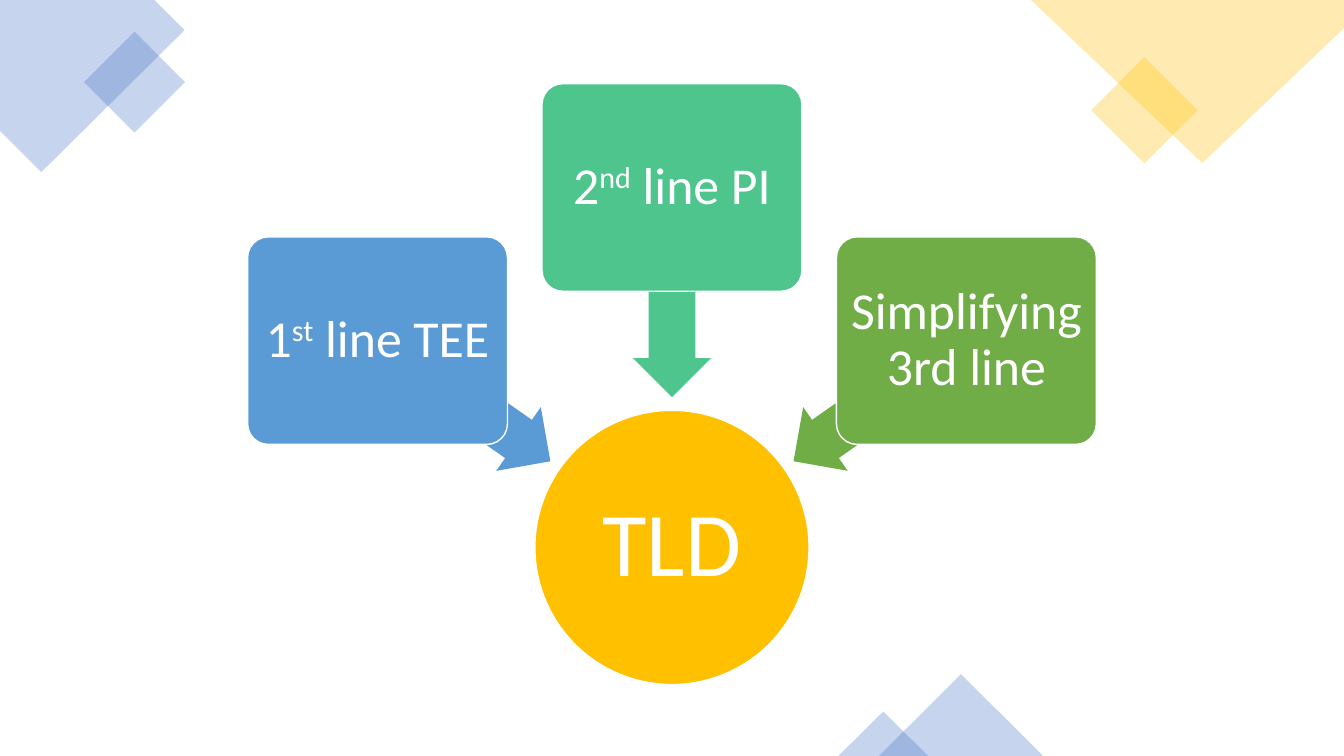
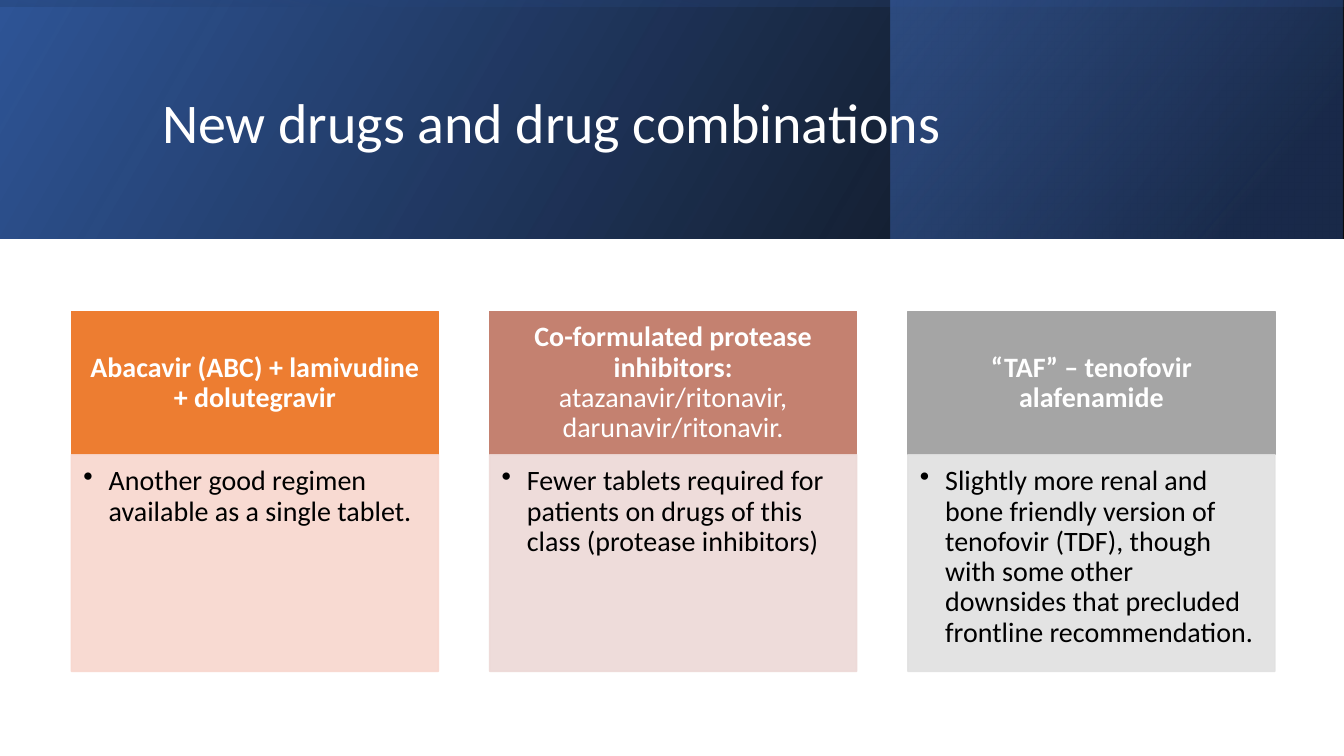
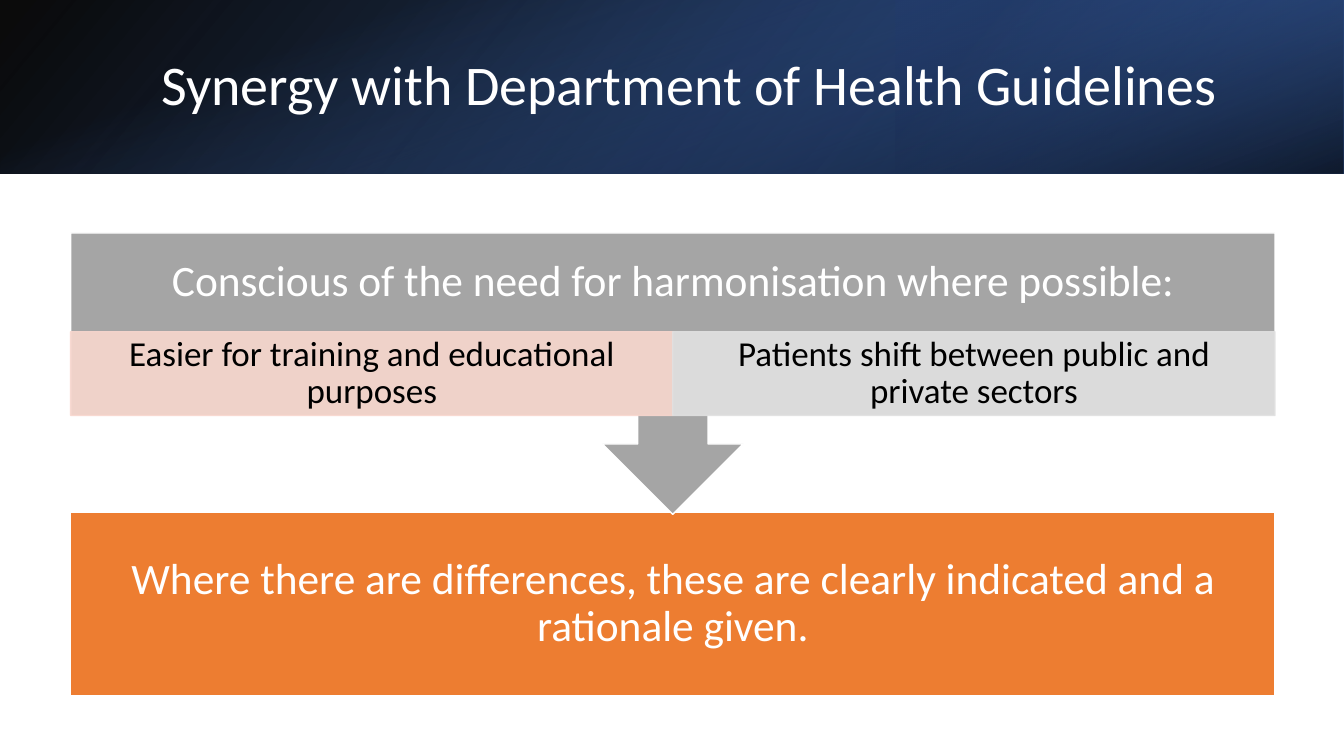
from dataclasses import dataclass

from lxml import etree
from pptx import Presentation
from pptx.dml.color import RGBColor
from pptx.enum.shapes import MSO_SHAPE as Preset
from pptx.enum.text import MSO_ANCHOR as Anchor, PP_ALIGN as Align
from pptx.oxml.ns import qn
from pptx.util import Cm, Pt

COLORS = {
    "white": "FFFFFF",
    "black": "000000",
    "blue": "4472C4",
    "deep_blue": "2F5597",
    "navy": "203864",
    "gold": "FFC000",
    "sky": "5B9BD5",
    "mint": "4DC58D",
    "green": "70AD47",
    "orange": "ED7D31",
    "clay": "C48170",
    "gray": "A5A5A5",
    "pale_orange": "F8D7CE",
    "pale_clay": "EDD9D7",
    "pale_gray": "E1E1E1",
}
FONT = "Calibri"
PAGE_WIDTH, PAGE_HEIGHT = 33.87, 19.05


@dataclass(frozen=True)
class Area:
    """A rectangle on the page, in centimetres."""
    left: float
    top: float
    width: float
    height: float

    def lengths(self):
        return Cm(self.left), Cm(self.top), Cm(self.width), Cm(self.height)


@dataclass(frozen=True)
class Span:
    text: str
    bold: bool = False
    raised: bool = False


@dataclass(frozen=True)
class TextStyle:
    size: float
    color: str = "white"
    align: Align = Align.CENTER
    anchor: Anchor = Anchor.MIDDLE
    insets: tuple = (0.25, 0.13, 0.25, 0.13)
    bullet: bool = False


@dataclass(frozen=True)
class Stop:
    position: float
    color: str
    opacity: int = 100


@dataclass(frozen=True)
class Gradient:
    stops: tuple
    angle: float


@dataclass(frozen=True)
class Spoke:
    side: int
    box_top: float
    arrow_middle: float
    color: str
    spans: tuple


@dataclass(frozen=True)
class Card:
    color: str
    pale: str
    heading: tuple
    body: str


TITLE = TextStyle(40, align=Align.LEFT)
HUB = TextStyle(65, insets=(0.13,) * 4)
SPOKE = TextStyle(37, insets=(0.2,) * 4)
CARD_HEAD = TextStyle(20, insets=(0.41, 0.23, 0.41, 0.23))
CARD_BODY = TextStyle(20, "black", Align.LEFT, Anchor.TOP, (0.3, 0.3, 0.41, 0.43), True)
STATEMENT = TextStyle(31, insets=(0.61,) * 4)
REASON = TextStyle(25, "black", insets=(0.48, 0.08, 0.48, 0.08))
BAND_BASE = (Stop(0, "black", 96), Stop(1, "deep_blue"))


def rgb(name: str) -> RGBColor:
    return RGBColor.from_string(COLORS[name])


def set_opacity(shape, opacities) -> None:
    """Give the colours of a shape, in order, their opacity in percent."""
    for color, opacity in zip(list(shape.element.spPr.iter(qn("a:srgbClr"))), opacities):
        etree.SubElement(color, qn("a:alpha")).set("val", str(opacity * 1000))


def paint(shape, fill: str, line: str | None = None, opacity: int = 100) -> None:
    shape.shadow.inherit = False
    shape.fill.solid()
    shape.fill.fore_color.rgb = rgb(fill)
    if line:
        shape.line.color.rgb = rgb(line)
        shape.line.width = Pt(1)
    else:
        shape.line.fill.background()
    if opacity < 100:
        set_opacity(shape, (opacity, opacity))


def write(shape, spans: tuple, style: TextStyle) -> None:
    frame = shape.text_frame
    frame.word_wrap = True
    frame.vertical_anchor = style.anchor
    (frame.margin_left, frame.margin_top,
     frame.margin_right, frame.margin_bottom) = map(Cm, style.insets)
    para = frame.paragraphs[0]
    if style.bullet:
        props = para._p.get_or_add_pPr()
        props.set("marL", str(Cm(0.64)))
        props.set("indent", str(-Cm(0.64)))
        etree.SubElement(props, qn("a:buChar")).set("char", "•")
    para.alignment = style.align
    para.line_spacing = 0.9
    para.font.name = FONT
    para.font.size = Pt(style.size)
    para.font.color.rgb = rgb(style.color)
    for span in spans:
        run = para.add_run()
        run.text = span.text
        if span.bold:
            run.font.bold = True
        if span.raised:
            run._r.get_or_add_rPr().set("baseline", "30000")


def add_block(page, preset, area: Area, fill: str, line: str | None = None,
              opacity: int = 100, rotation: float = 0, adjust: tuple = ()):
    shape = page.shapes.add_shape(preset, *area.lengths())
    paint(shape, fill, line, opacity)
    shape.rotation = rotation
    for index, value in enumerate(adjust):
        shape.adjustments[index] = value
    return shape


def add_text(page, area: Area, text: str, style: TextStyle) -> None:
    write(page.shapes.add_textbox(*area.lengths()), (Span(text),), style)


def add_polygon(page, points: tuple, fill: str, opacity: int) -> None:
    start, *rest = [(Cm(x), Cm(y)) for x, y in points]
    builder = page.shapes.build_freeform(*start)
    builder.add_line_segments(rest, close=True)
    paint(builder.convert_to_shape(), fill, opacity=opacity)


def add_gradient(page, area: Area, gradient: Gradient,
                 rotation: float = 0, mirrored: bool = True) -> None:
    shape = page.shapes.add_shape(Preset.RECTANGLE, *area.lengths())
    shape.shadow.inherit = False
    shape.line.fill.background()
    shape.rotation = rotation
    if mirrored:
        shape.element.spPr.find(qn("a:xfrm")).set("flipH", "1")
    shape.fill.gradient()
    shape.fill.gradient_angle = 360 - gradient.angle
    for target, stop in zip(shape.fill.gradient_stops, gradient.stops):
        target.position = stop.position
        target.color.rgb = rgb(stop.color)
    set_opacity(shape, [stop.opacity for stop in gradient.stops])


def upright(height: float) -> Area:
    """The area that covers a full-width band after a quarter turn."""
    return Area((PAGE_WIDTH - height) / 2, (height - PAGE_WIDTH) / 2, height, PAGE_WIDTH)


def add_corner_decoration(page) -> None:
    opacity = 30
    add_polygon(page, ((0, 0), (3.89, 0), (4.65, 0.76), (1.04, 4.34), (0, 3.3)),
                "blue", opacity)
    add_block(page, Preset.RECTANGLE, Area(2.49, 1.17, 1.8, 1.8), "blue",
              opacity=opacity, rotation=45)
    add_block(page, Preset.RECTANGLE, Area(27.89, 1.83, 1.9, 1.9), "gold",
              opacity=opacity, rotation=45)
    add_polygon(page, ((PAGE_WIDTH, 0), (25.98, 0), (30.3, 4.11), (PAGE_WIDTH, 0.71)),
                "gold", opacity)
    for left, width, height in ((22.15, 4.14, 2.06), (21.13, 2.26, 1.12)):
        add_block(page, Preset.ISOSCELES_TRIANGLE,
                  Area(left, PAGE_HEIGHT - height, width, height), "blue", opacity=opacity)


def add_spoke(page, spoke: Spoke) -> None:
    """An arrow to the hub, with its box over the arrow's tail."""
    center = PAGE_WIDTH / 2
    width, height = 5.31, 1.96
    arrow = Area(center + 5.24 * spoke.side - width / 2,
                 spoke.arrow_middle - height / 2, width, height)
    add_block(page, Preset.LEFT_ARROW, arrow, spoke.color,
              rotation=270 + 55 * spoke.side, adjust=(0.6, 0.5))
    width, height = 6.55, 5.23
    box = Area(center + 7.42 * spoke.side - width / 2, spoke.box_top, width, height)
    write(add_block(page, Preset.ROUNDED_RECTANGLE, box, spoke.color, "white", adjust=(0.1,)),
          spoke.spans, SPOKE)


def build_lines_page(page) -> None:
    add_corner_decoration(page)
    size = 6.91
    hub = add_block(page, Preset.OVAL, Area((PAGE_WIDTH - size) / 2, 10.34, size, size),
                    "gold", "white")
    write(hub, (Span("TLD"),), HUB)
    for spoke in (
        Spoke(-1, 5.97, 10.1, "sky", (Span("1"), Span("st", raised=True), Span(" line TEE"))),
        Spoke(0, 2.11, 7.35, "mint", (Span("2"), Span("nd", raised=True), Span(" line PI"))),
        Spoke(1, 5.97, 10.1, "green", (Span("Simplifying 3rd line"),)),
    ):
        add_spoke(page, spoke)


def add_card(page, card: Card, left: float) -> None:
    width, top, head_height = 9.25, 7.85, 3.61
    head = add_block(page, Preset.RECTANGLE, Area(left, top, width, head_height),
                     card.color, card.color)
    write(head, card.heading, CARD_HEAD)
    body = add_block(page, Preset.RECTANGLE, Area(left, top + head_height, width, 5.46),
                     card.pale, card.pale, opacity=90)
    write(body, (Span(card.body),), CARD_BODY)


def build_drugs_page(page) -> None:
    band = 6.02
    add_gradient(page, Area(0, 0, PAGE_WIDTH, band), Gradient(BAND_BASE, 330))
    add_gradient(page, Area(22.45, 0, 11.38, band),
                 Gradient((Stop(0.19, "navy", 68), Stop(1, "blue", 48)), 320))
    add_gradient(page, upright(band),
                 Gradient((Stop(0.23, "deep_blue", 16), Stop(0.99, "black", 45)), 350),
                 rotation=270)
    add_text(page, Area(3.84, 0.97, 27, 4.37), "New drugs and drug combinations", TITLE)
    cards = (
        Card("orange", "pale_orange",
             (Span("Abacavir (ABC) + lamivudine + dolutegravir", bold=True),),
             "Another good regimen available as a single tablet."),
        Card("clay", "pale_clay",
             (Span("Co-formulated protease inhibitors: ", bold=True),
              Span("atazanavir/ritonavir, darunavir/ritonavir.")),
             "Fewer tablets required for patients on drugs of this class (protease inhibitors)"),
        Card("gray", "pale_gray",
             (Span("“TAF” – tenofovir alafenamide", bold=True),),
             "Slightly more renal and bone friendly version of tenofovir (TDF), though with "
             "some other downsides that precluded frontline recommendation."),
    )
    for index, card in enumerate(cards):
        add_card(page, card, 1.8 + 10.54 * index)


def build_synergy_page(page) -> None:
    band = 4.37
    add_gradient(page, Area(0, 0, PAGE_WIDTH, band), Gradient(BAND_BASE, 140))
    add_gradient(page, Area(22.58, 0, 11.29, band),
                 Gradient((Stop(0.19, "navy", 68), Stop(1, "blue", 79)), 320), rotation=180)
    add_gradient(page, upright(band),
                 Gradient((Stop(0.23, "blue", 0), Stop(0.99, "black", 74)), 340),
                 rotation=90, mirrored=False)
    add_text(page, Area(3.81, 0.97, 27.89, 2.44),
             "Synergy with Department of Health Guidelines", TITLE)

    left, width, top, heading_height = 1.78, 30.35, 5.87, 2.49
    outcome = add_block(page, Preset.RECTANGLE, Area(left, 12.9, width, 4.62),
                        "orange", "white")
    write(outcome, (Span("Where there are differences, these are clearly indicated "
                         "and a rationale given."),), STATEMENT)
    add_block(page, Preset.UP_ARROW_CALLOUT, Area(left, top, width, 7.09),
              "gray", "white", rotation=180)
    add_text(page, Area(left, top, width, heading_height),
             "Conscious of the need for harmonisation where possible:", STATEMENT)
    reasons = (
        ("pale_orange", "Easier for training and educational purposes"),
        ("pale_gray", "Patients shift between public and private sectors"),
    )
    half = width / len(reasons)
    for index, (color, text) in enumerate(reasons):
        reason = add_block(page, Preset.RECTANGLE,
                           Area(left + half * index, top + heading_height, half, 2.11),
                           color, color, opacity=90)
        write(reason, (Span(text),), REASON)


def main() -> None:
    deck = Presentation()
    deck.slide_width, deck.slide_height = Cm(PAGE_WIDTH), Cm(PAGE_HEIGHT)
    blank = deck.slide_layouts[6]
    for build in (build_lines_page, build_drugs_page, build_synergy_page):
        build(deck.slides.add_slide(blank))
    deck.save("out.pptx")


if __name__ == "__main__":
    main()
